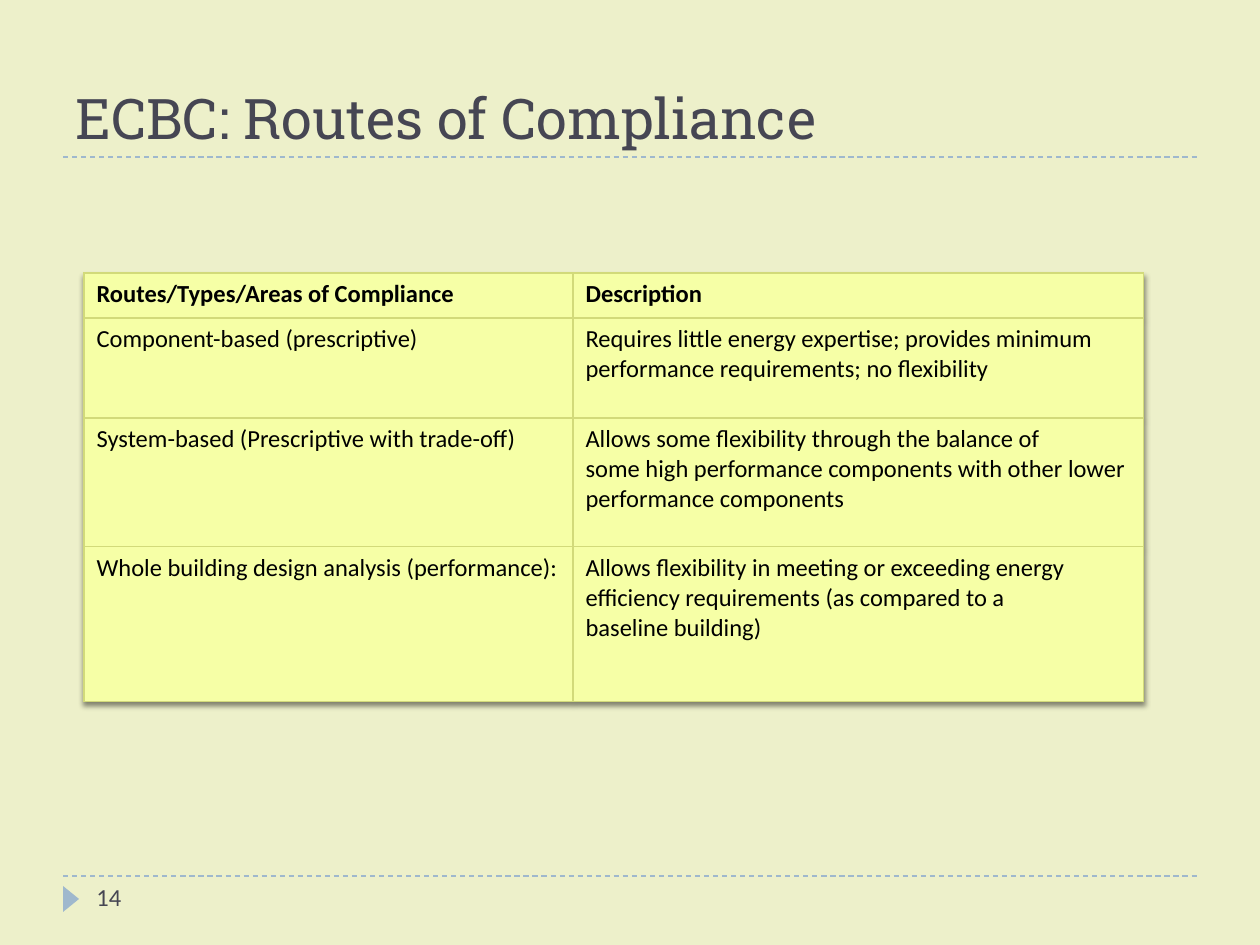
from lxml.etree import SubElement
from pptx import Presentation
from pptx.dml.color import RGBColor
from pptx.enum.dml import MSO_LINE
from pptx.enum.shapes import MSO_CONNECTOR, MSO_SHAPE
from pptx.enum.text import MSO_ANCHOR
from pptx.oxml import parse_xml
from pptx.oxml.ns import nsdecls, qn
from pptx.util import Emu, Pt


def px(n):
    return Emu(round(n * 914400 / 126))


def hue(code):
    return RGBColor.from_string(code)


INK, BLUE, EDGE = "464653", "9FB8CD", "D2DA7A"
BODY = {"name": "Calibri", "size": Pt(14), "bold": False}
HEAD = {**BODY, "bold": True}
TITLE = {"name": "Roboto Slab", "size": Pt(32)}

deck = Presentation()
deck.slide_width, deck.slide_height = px(1260), px(945)
slide = deck.slides.add_slide(deck.slide_layouts[6])
slide.background.fill.solid()
slide.background.fill.fore_color.rgb = hue("EDF0CA")
shapes = slide.shapes

# Dashed rules
for y in (876, 157):
    rule = shapes.add_connector(MSO_CONNECTOR.STRAIGHT, px(63), px(y), px(1197), px(y))
    rule.line.color.rgb = hue(BLUE)
    rule.line.width = Pt(0.75)
    rule.line.dash_style = MSO_LINE.DASH
    SubElement(rule._element.spPr, qn("a:effectLst"))

# Page marker
mark = shapes.add_shape(MSO_SHAPE.ISOSCELES_TRIANGLE, px(58), px(891), px(26), px(16))
mark.rotation = 90
mark.shadow.inherit = False
mark.fill.solid()
mark.fill.fore_color.rgb = hue(BLUE)
mark.line.fill.background()

# Title and page number
for text, area, anchor, style in (
    ("ECBC: Routes of Compliance", (63, 21, 1134, 136), MSO_ANCHOR.BOTTOM, TITLE),
    ("14", (84, 876, 273, 50), MSO_ANCHOR.TOP, BODY),
):
    frame = shapes.add_textbox(*map(px, area)).text_frame
    frame.word_wrap = True
    frame.vertical_anchor = anchor
    frame.text = text
    font = frame.paragraphs[0].font
    for key, value in style.items():
        setattr(font, key, value)
    font.color.rgb = hue(INK)

# Table: each line break in a cell starts a hanging paragraph
rows = (
    ("Routes/Types/Areas of Compliance", "Description"),
    ("Component-based (prescriptive)",
     "Requires little energy expertise; provides minimum performance requirements; no flexibility"),
    ("System-based (Prescriptive with trade-off)",
     "Allows some flexibility through the balance of\n"
     "some high performance components with other lower\n"
     "performance components"),
    ("Whole building design analysis (performance):",
     "Allows flexibility in meeting or exceeding energy\n"
     "efficiency requirements (as compared to a\n"
     "baseline building)"),
)
wide, high = (489, 571), (45, 100, 129, 155)
grid = shapes.add_table(4, 2, px(84), px(273), px(sum(wide)), px(sum(high))).table
grid.first_row = grid.horz_banding = False
for col, w in zip(grid.columns, wide):
    col.width = px(w)
for row, h in zip(grid.rows, high):
    row.height = px(h)

for r, row in enumerate(rows):
    for c, text in enumerate(row):
        cell = grid.cell(r, c)
        cell.text = text
        cell.margin_left = cell.margin_right = Pt(7.2)
        cell.margin_top = cell.margin_bottom = Pt(3.6)
        for para in cell.text_frame.paragraphs:
            if "\n" in text:
                props = para._p.get_or_add_pPr()
                props.set("marL", str(px(48)))
                props.set("indent", str(-px(48)))
            for key, value in (BODY if r else HEAD).items():
                setattr(para.font, key, value)
            para.font.color.rgb = hue("000000")
        # Borders come before the fill in the cell properties
        for side in ("lnL", "lnR", "lnT", "lnB"):
            line = SubElement(cell._tc.get_or_add_tcPr(), qn("a:" + side), w=str(Pt(0.75)))
            paint = SubElement(line, qn("a:solidFill"))
            SubElement(paint, qn("a:srgbClr"), val=EDGE)
        cell.fill.solid()
        cell.fill.fore_color.rgb = hue("F6FFA6")

# Table shadow
grid._tbl.tblPr.insert(0, parse_xml(
    f'<a:effectLst {nsdecls("a")}><a:outerShdw blurRad="38100" dist="25400" dir="5400000">'
    '<a:srgbClr val="000000"><a:alpha val="45000"/></a:srgbClr></a:outerShdw></a:effectLst>'))

deck.save("out.pptx")
